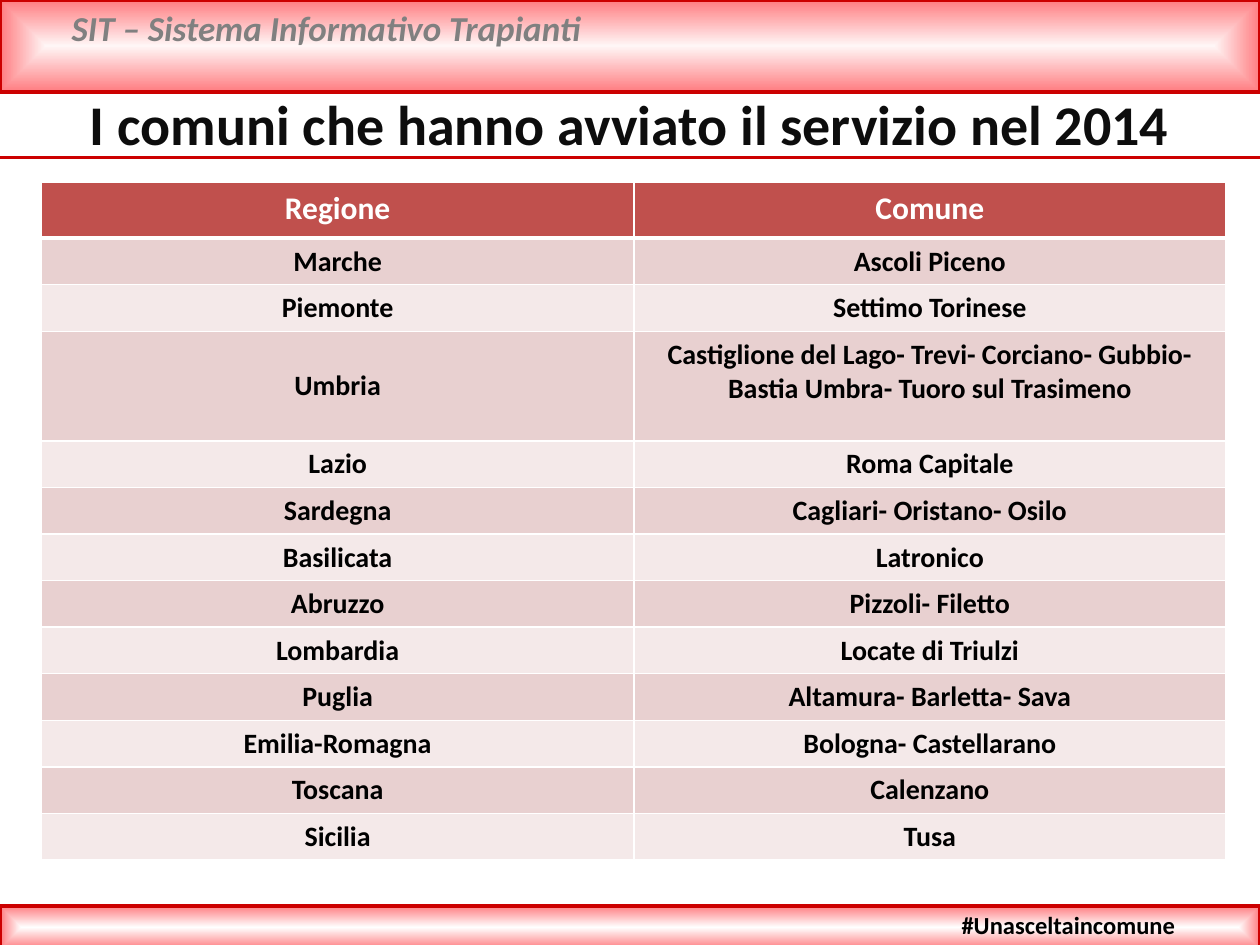
from lxml import etree
from pptx import Presentation
from pptx.dml.color import RGBColor
from pptx.enum.shapes import MSO_CONNECTOR, MSO_SHAPE
from pptx.enum.text import MSO_ANCHOR, PP_ALIGN
from pptx.oxml.ns import qn
from pptx.util import Inches, Pt

CENTER = PP_ALIGN.CENTER
LEFT = PP_ALIGN.LEFT
TOP = MSO_ANCHOR.TOP
MIDDLE = MSO_ANCHOR.MIDDLE
RECTANGLE = MSO_SHAPE.RECTANGLE
STRAIGHT = MSO_CONNECTOR.STRAIGHT

FONT = "Calibri"
TITLE_ONLY = 5
COLORS = {
    "red": "CC0000",
    "pink": "FF7C80",
    "pale_pink": "FFF6F6",
    "white": "FFFFFF",
    "black": "000000",
    "gray": "808080",
    "title": "0D0D0D",
    "header_row": "C0504D",
    "dark_band": "E8D0D0",
    "light_band": "F4E9E9",
}

HEADINGS = ("Regione", "Comune")
TOWNS_BY_REGION = [
    ("Marche", "Ascoli Piceno"),
    ("Piemonte", "Settimo Torinese"),
    ("Umbria", "Castiglione del Lago- Trevi- Corciano- Gubbio- "
               "Bastia Umbra- Tuoro sul Trasimeno"),
    ("Lazio", "Roma Capitale"),
    ("Sardegna", "Cagliari- Oristano- Osilo"),
    ("Basilicata", "Latronico"),
    ("Abruzzo", "Pizzoli- Filetto"),
    ("Lombardia", "Locate di Triulzi"),
    ("Puglia", "Altamura- Barletta- Sava"),
    ("Emilia-Romagna", "Bologna- Castellarano"),
    ("Toscana", "Calenzano"),
    ("Sicilia", "Tusa"),
]
TALL_REGION = "Umbria"
HEADER_HEIGHT, ROW_HEIGHT, TALL_HEIGHT = 0.44, 0.37, 0.87


def color(name):
    return RGBColor.from_string(COLORS[name])


def write_text(text_frame, text, size, color_name, align=CENTER, italic=False):
    text_frame.text = text
    paragraph = text_frame.paragraphs[0]
    paragraph.alignment = align
    font = paragraph.font
    font.name = FONT
    font.size = Pt(size)
    font.bold = True
    font.italic = italic
    font.color.rgb = color(color_name)


def set_red_line(shape):
    shape.line.color.rgb = color("red")
    shape.line.width = Pt(2)


def add_gradient_bar(slide, top, height, middle_color):
    """Full-width bar shading from its middle out to pink edges."""
    bar = slide.shapes.add_shape(RECTANGLE, 0, Inches(top), Inches(10), Inches(height))
    bar.shadow.inherit = False
    set_red_line(bar)
    bar.fill.gradient()
    for stop, name in zip(bar.fill.gradient_stops, (middle_color, "pink")):
        stop.color.rgb = color(name)
    gradient = bar.element.spPr.find(qn("a:gradFill"))
    linear = gradient.find(qn("a:lin"))
    shading = etree.Element(qn("a:path"), path="shape")
    etree.SubElement(shading, qn("a:fillToRect"),
                     {side: "50000" for side in "ltrb"})
    gradient.replace(linear, shading)


def add_rule(slide, top):
    rule = slide.shapes.add_connector(STRAIGHT, 0, Inches(top), Inches(10), Inches(top))
    set_red_line(rule)
    etree.SubElement(rule.element.spPr, qn("a:effectLst"))


def add_label(slide, left, top, width, height, text, size, color_name, **style):
    box = slide.shapes.add_textbox(Inches(left), Inches(top), Inches(width), Inches(height))
    box.text_frame.word_wrap = True
    write_text(box.text_frame, text, size, color_name, **style)


def place_title(slide, text):
    title = slide.shapes.title
    title.left, title.top = Inches(0.16), Inches(0.66)
    title.width, title.height = Inches(9.68), Inches(0.64)
    title.text_frame.vertical_anchor = TOP
    write_text(title.text_frame, text, 32, "title")


def set_white_borders(cell, bottom):
    properties = cell._tc.get_or_add_tcPr()
    for side, points in (("L", 1), ("R", 1), ("T", 1), ("B", bottom)):
        border = etree.SubElement(properties, qn(f"a:ln{side}"), w=str(Pt(points)))
        fill = etree.SubElement(border, qn("a:solidFill"))
        etree.SubElement(fill, qn("a:srgbClr"), val=COLORS["white"])


def format_cell(cell, text, size, text_color, fill_color, bottom=1):
    set_white_borders(cell, bottom)
    cell.fill.solid()
    cell.fill.fore_color.rgb = color(fill_color)
    write_text(cell.text_frame, text, size, text_color)


def add_towns_table(slide):
    heights = [HEADER_HEIGHT] + [
        TALL_HEIGHT if region == TALL_REGION else ROW_HEIGHT
        for region, _ in TOWNS_BY_REGION
    ]
    table = slide.shapes.add_table(
        len(heights), len(HEADINGS),
        Inches(0.33), Inches(1.45), Inches(9.4), Inches(sum(heights))).table
    for row, height in zip(table.rows, heights):
        row.height = Inches(height)
    for column, heading in enumerate(HEADINGS):
        format_cell(table.cell(0, column), heading, 18, "white", "header_row", bottom=3)
    for row, entry in enumerate(TOWNS_BY_REGION, start=1):
        band = "dark_band" if row % 2 else "light_band"
        for column, text in enumerate(entry):
            cell = table.cell(row, column)
            format_cell(cell, text, 16, "black", band)
            if text == TALL_REGION:
                cell.vertical_anchor = MIDDLE


def main():
    presentation = Presentation()
    presentation.slide_width = Inches(10)
    presentation.slide_height = Inches(7.5)
    slide = presentation.slides.add_slide(presentation.slide_layouts[TITLE_ONLY])

    add_gradient_bar(slide, 0, 0.73, "pale_pink")
    add_label(slide, 0.47, 0, 8.98, 0.44, "SIT – Sistema Informativo Trapianti",
              20, "gray", align=LEFT, italic=True)
    add_gradient_bar(slide, 7.19, 0.34, "white")
    add_rule(slide, 1.25)
    add_label(slide, 7.1, 7.17, 2.76, 0.34, "#Unasceltaincomune", 14, "black")
    place_title(slide, "I comuni che hanno avviato il servizio nel 2014")
    add_towns_table(slide)

    presentation.save("out.pptx")


if __name__ == "__main__":
    main()
